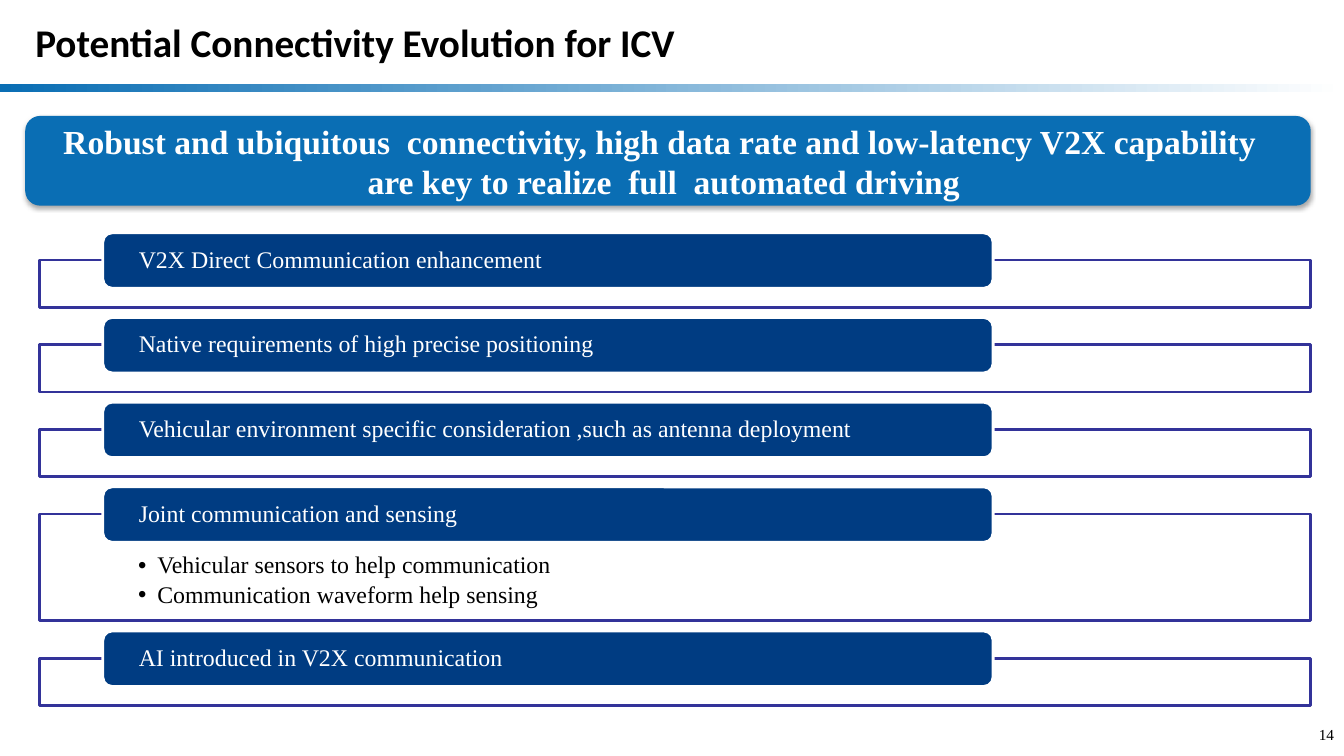
from lxml import etree
from pptx import Presentation
from pptx import util as u
from pptx.dml.color import RGBColor
from pptx.enum import shapes, text
from pptx.oxml import ns

PX = 9144  # EMU; 100 px to the inch
COLORS = {
    "ink": "000000",
    "paper": "FFFFFF",
    "blue": "0A6EB4",
    "navy": "003C82",
    "frame": "333399",
}
SERIF = "Times New Roman"
TITLE_FONT = "Calibri"

BANNER = ("Robust and ubiquitous  connectivity, high data rate and low-latency "
          "V2X capability   are key to realize  full  automated driving ")
TOPICS = [
    ("V2X Direct Communication enhancement", []),
    ("Native requirements of high precise positioning", []),
    ("Vehicular environment specific consideration ,such as antenna deployment", []),
    ("Joint communication and sensing",
     ["Vehicular sensors to help communication", "Communication waveform help sensing"]),
    ("AI introduced in V2X communication", []),
]
FIRST_TOP, LABEL_RISE, TOPIC_GAP = 231, 27, 10
FRAME_HEIGHT, LIST_FRAME_HEIGHT = 47, 106


def rgb(name):
    return RGBColor.from_string(COLORS[name])


def add_xml(parent, tag, **attributes):
    return etree.SubElement(parent, ns.qn(tag), attributes)


class SlideBuilder:
    def __init__(self, deck):
        self.page = deck.slides.add_slide(deck.slide_layouts[1])
        self.title_box, self.body_box = self.page.placeholders

    def place(self, box, left, top, width, height):
        box.left, box.top, box.width, box.height = (
            u.Emu(n * PX) for n in (left, top, width, height))

    def set_text(self, box, lines, size, color="ink", font=SERIF, bold=False,
                 align=text.PP_ALIGN.LEFT, anchor=text.MSO_ANCHOR.MIDDLE,
                 insets=(10, 5, 10, 5), spacing=1.0):
        frame = box.text_frame
        frame.text = "\n".join(lines)
        frame.word_wrap = True
        frame.auto_size = text.MSO_AUTO_SIZE.NONE
        frame.vertical_anchor = anchor
        frame.margin_left, frame.margin_top, frame.margin_right, frame.margin_bottom = (
            u.Emu(n * PX) for n in insets)
        for para in frame.paragraphs:
            para.alignment = align
            para.line_spacing = spacing
            para.space_before = u.Pt(0)
            for span in para.runs:
                span.font.name = font
                span.font.size = u.Pt(size)
                span.font.bold = bold
                span.font.color.rgb = rgb(color)

    def shape(self, kind, at, fill, line=None):
        box = self.page.shapes.add_shape(kind, *(u.Emu(n * PX) for n in at))
        box.shadow.inherit = False
        self.paint(box, fill, line)
        return box

    def paint(self, box, fill, line=None):
        box.fill.solid()
        box.fill.fore_color.rgb = rgb(fill)
        if line:
            box.line.color.rgb = rgb(line)
            box.line.width = u.Pt(2)
        else:
            box.line.fill.background()

    def title(self, words):
        self.place(self.title_box, 25, 0, 1003, 83)
        self.set_text(self.title_box, [words], 28, font=TITLE_FONT, bold=True)

    def fading_rule(self):
        rule = self.shape(shapes.MSO_SHAPE.RECTANGLE, (0, 83, 1333, 8), "blue")
        rule.fill.gradient()
        rule.fill.gradient_angle = 0
        for stop, color, position in zip(rule.fill.gradient_stops, ("blue", "paper"), (0, 1)):
            stop.color.rgb = rgb(color)
            stop.position = position

    def banner(self, words):
        box = self.shape(shapes.MSO_SHAPE.ROUNDED_RECTANGLE, (25, 115, 1275, 89), "blue")
        effects = box._element.spPr.find(ns.qn("a:effectLst"))
        shadow = add_xml(effects, "a:outerShdw", blurRad=str(u.Pt(3.1)),
                         dist=str(u.Pt(1.8)), dir="5400000", rotWithShape="0")
        tint = add_xml(shadow, "a:srgbClr", val=COLORS["ink"])
        add_xml(tint, "a:alpha", val="35000")
        self.set_text(box, [words], 24, "paper", bold=True, align=text.PP_ALIGN.CENTER)

    def bullet_frame(self, at, items):
        """Turn the body placeholder into a framed bullet list."""
        self.place(self.body_box, *at)
        self.paint(self.body_box, "paper", "frame")
        self.set_text(self.body_box, items, 17, anchor=text.MSO_ANCHOR.TOP,
                      insets=(98, 39, 98, 13), spacing=0.9)
        for para in self.body_box.text_frame.paragraphs:
            para.level = 1
            para.space_after = u.Pt(2.6)
            properties = para._p.get_or_add_pPr()
            properties.set("marL", str(19 * PX))
            properties.set("indent", str(-19 * PX))
            add_xml(properties, "a:buFont", typeface="Arial")
            add_xml(properties, "a:buChar", char="•")

    def topic(self, top, label, items):
        """Draw one framed topic and return the top of the next one."""
        height = LIST_FRAME_HEIGHT if items else FRAME_HEIGHT
        frame_at = (39, top + LABEL_RISE, 1261, height)
        if items:
            self.bullet_frame(frame_at, items)
        else:
            self.shape(shapes.MSO_SHAPE.RECTANGLE, frame_at, "paper", "frame")
        tab = self.shape(shapes.MSO_SHAPE.ROUNDED_RECTANGLE, (102, top, 883, 55),
                         "navy", "paper")
        self.set_text(tab, [label], 17, "paper", insets=(33, 0, 33, 0), spacing=0.9)
        return top + LABEL_RISE + height + TOPIC_GAP

    def page_number(self, number):
        box = self.page.shapes.add_textbox(0, 0, 0, 0)
        self.place(box, 1270, 715, 63, 35)
        self.set_text(box, [number], 10.9, align=text.PP_ALIGN.RIGHT,
                      anchor=text.MSO_ANCHOR.TOP)


def main():
    deck = Presentation()
    deck.slide_width, deck.slide_height = u.Emu(1333 * PX), u.Emu(750 * PX)
    builder = SlideBuilder(deck)
    builder.page_number("14")
    builder.fading_rule()
    builder.title("Potential Connectivity Evolution for ICV")
    top = FIRST_TOP
    for label, items in TOPICS:
        top = builder.topic(top, label, items)
    builder.banner(BANNER)
    deck.save("out.pptx")


if __name__ == "__main__":
    main()
